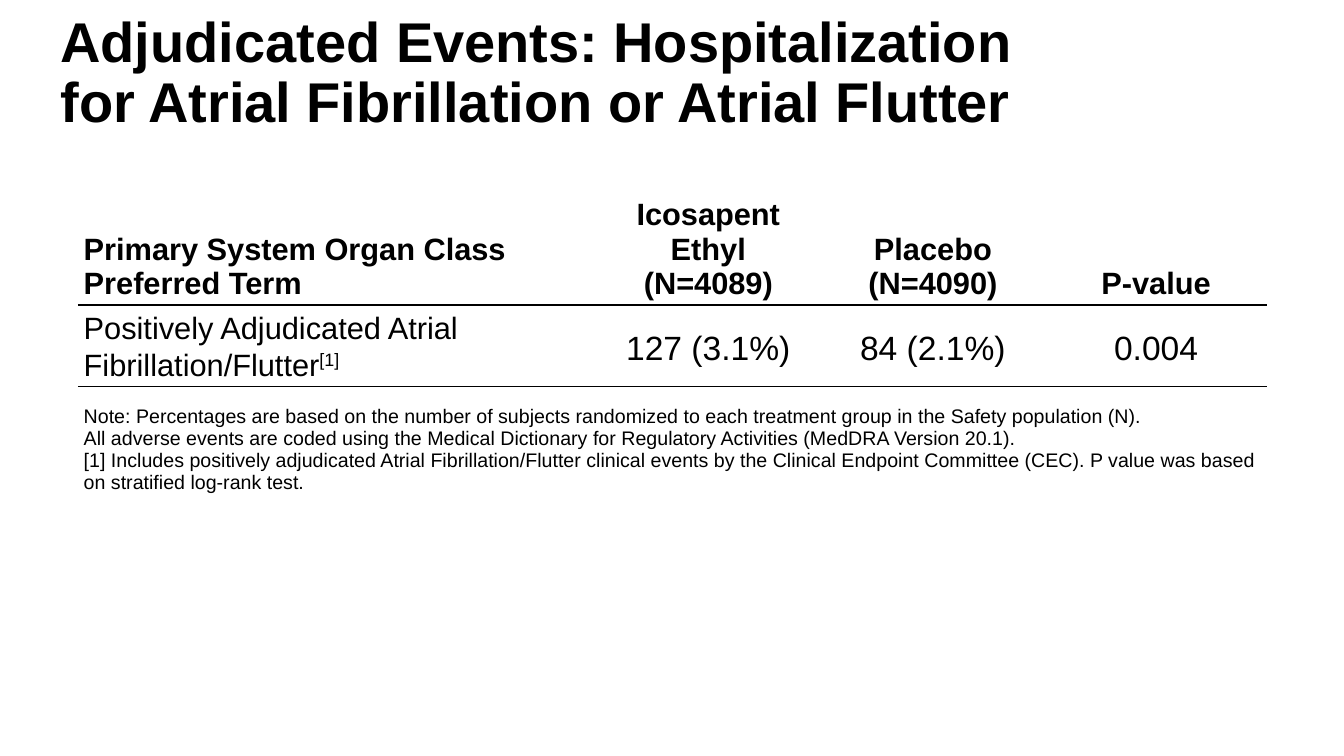
from lxml import etree
from pptx import Presentation
from pptx import util as u
from pptx.dml.color import RGBColor
from pptx.enum import text
from pptx.oxml import ns

BLACK = RGBColor(0, 0, 0)
WHITE = RGBColor(255, 255, 255)
LEFT, MID = text.PP_ALIGN.LEFT, text.PP_ALIGN.CENTER
TOP, CORE, BASE = (text.MSO_ANCHOR.TOP, text.MSO_ANCHOR.MIDDLE,
                   text.MSO_ANCHOR.BOTTOM)


class Deck:
    font = "Arial"

    def __init__(self, wide, high):
        self.prs = Presentation()
        self.prs.slide_width, self.prs.slide_height = u.Cm(wide), u.Cm(high)
        self.slide = self.prs.slides.add_slide(self.prs.slide_layouts[5])

    def run(self, para, words, size, bold=False, base=0):
        run = para.add_run()
        run.text = words
        run.font.name, run.font.size = self.font, u.Pt(size)
        run.font.bold, run.font.color.rgb = bold, BLACK
        if base:
            run._r.get_or_add_rPr().set("baseline", str(base * 1000))

    def lines(self, para, rows, size, bold=False):
        for num, row in enumerate(rows):
            if num:
                para.add_line_break()
            self.run(para, row, size, bold)

    def title(self, box, rows, size):
        shape = self.slide.shapes.title
        shape.left, shape.top, shape.width, shape.height = map(u.Cm, box)
        frame = shape.text_frame
        frame.word_wrap, frame.auto_size = True, text.MSO_AUTO_SIZE.NONE
        frame.vertical_anchor = CORE
        para = frame.paragraphs[0]
        para.alignment, para.line_spacing = LEFT, 0.9
        self.lines(para, rows, size, True)

    def table(self, left, top, cols, rows):
        grid = self.slide.shapes.add_table(
            len(rows), len(cols), u.Cm(left), u.Cm(top),
            u.Cm(sum(cols)), u.Cm(sum(rows))).table
        grid.first_row = grid.horz_banding = False
        for col, wide in zip(grid.columns, cols):
            col.width = u.Cm(wide)
        for row, high in zip(grid.rows, rows):
            row.height = u.Cm(high)
        return grid

    def edge(self, cell, side, width):
        line = etree.SubElement(cell._tc.get_or_add_tcPr(), ns.qn("a:ln" + side))
        if not width:
            etree.SubElement(line, ns.qn("a:noFill"))
            return
        line.set("w", str(u.Pt(width)))
        fill = etree.SubElement(line, ns.qn("a:solidFill"))
        etree.SubElement(fill, ns.qn("a:srgbClr")).set("val", str(BLACK))

    def cell(self, cell, anchor, align, space, rules, pads=(0.1, 0.1)):
        for side, width in zip("LRTB", (0, 0, *rules)):
            self.edge(cell, side, width)
        cell.fill.solid()
        cell.fill.fore_color.rgb = WHITE
        cell.margin_left = cell.margin_right = u.Cm(0.15)
        cell.margin_top, cell.margin_bottom = map(u.Cm, pads)
        cell.vertical_anchor = anchor
        para = cell.text_frame.paragraphs[0]
        para.alignment, para.line_spacing = align, space
        return para


HEADS = [["Primary System Organ Class", "Preferred Term"],
         ["Icosapent Ethyl", "(N=4089)"],
         ["Placebo", "(N=4090)"],
         ["P-value"]]
VALUES = ["127 (3.1%)", "84 (2.1%)", "0.004"]
NOTES = [
    "Note: Percentages are based on the number of subjects randomized to each "
    "treatment group in the Safety population (N).",
    "All adverse events are coded using the Medical Dictionary for Regulatory "
    "Activities (MedDRA Version 20.1).",
    "[1] Includes positively adjudicated Atrial Fibrillation/Flutter clinical "
    "events by the Clinical Endpoint Committee (CEC). P value was based on "
    "stratified log-rank test."]


def main():
    deck = Deck(33.87, 19.05)
    deck.title((1.27, 0.03, 29.21, 3.68),
               ["Adjudicated Events: Hospitalization",
                "for Atrial Fibrillation or Atrial Flutter"], 40)
    grid = deck.table(1.96, 4.88, [13.06, 5.66, 5.66, 5.59], [2.8, 2.06, 3.2])

    for col, head in enumerate(HEADS):
        para = deck.cell(grid.cell(0, col), BASE, MID if col else LEFT, 1.0, (0, 1.5))
        deck.lines(para, head, 22, True)

    term = deck.cell(grid.cell(1, 0), CORE, LEFT, 1.07, (1.5, 1))
    deck.run(term, "Positively Adjudicated Atrial Fibrillation/Flutter", 22)
    deck.run(term, "[1]", 22, base=30)
    for col, value in enumerate(VALUES, 1):
        para = deck.cell(grid.cell(1, col), CORE, MID, 1.15, (1.5, 1))
        deck.run(para, value, 24)

    grid.cell(2, 0).merge(grid.cell(2, 3))
    paras = [deck.cell(cell, TOP, LEFT, 1.0, (1, 0), (0.47, 0))
             for cell in grid.rows[2].cells]
    deck.lines(paras[0], NOTES, 14)
    deck.prs.save("out.pptx")


if __name__ == "__main__":
    main()
